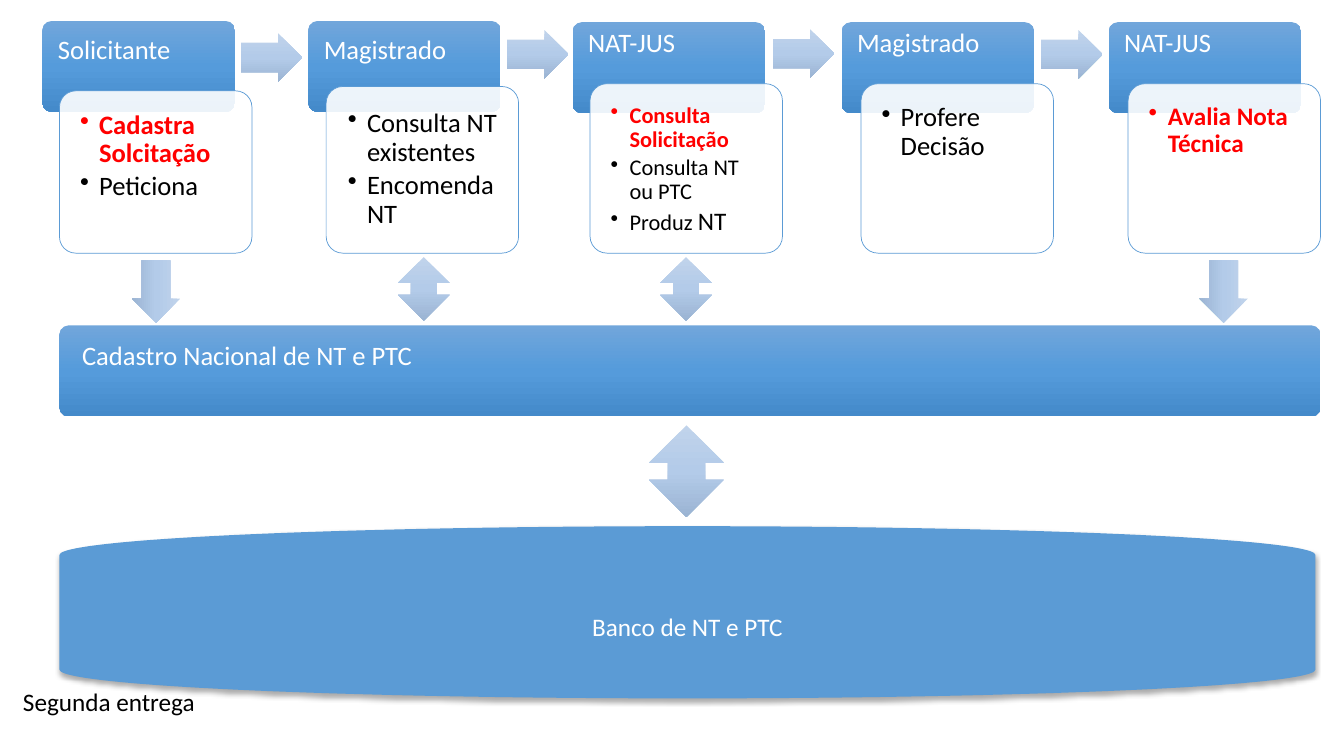
import copy

import pptx
import pptx.dml.color
import pptx.enum.shapes
import pptx.enum.text
import pptx.oxml
import pptx.oxml.ns
import pptx.util

Cm = pptx.util.Cm
Pt = pptx.util.Pt
SHAPE = pptx.enum.shapes.MSO_SHAPE
qn = pptx.oxml.ns.qn

FONT = "Calibri"
WHITE, BLACK, RED, BLUE = "FFFFFF", "000000", "FF0000", "5B9BD5"
BAR_GRADIENT = ("71A6DB", "559BDB", "448ACA")
ARROW_GRADIENT = ("C0D3EB", "B3CBE9", "9BB4D3")

BAR_W, BAR_H = 4.85, 2.29
CARD_BOTTOM = 6.38
INSET = 0.39

# Bar left, bar top, title top, title, card left, card top, text shift, items
# Each item is a list of runs: text, size, colour, bold
STAGES = [
    (1.07, 0.53, 0.53, "Solicitante", 1.5, 2.29, (0.13, 0.12),
     [[("Cadastra Solcitação", 19, RED, True)],
      [("Peticiona", 19, BLACK, False)]]),
    (7.77, 0.53, 0.53, "Magistrado", 8.22, 2.18, (0.16, 0.2),
     [[("Consulta NT existentes", 19, BLACK, False)],
      [("Encomenda NT", 19, BLACK, False)]]),
    (14.43, 0.56, 0.36, "NAT-JUS", 14.87, 2.11, (0.13, 0.12),
     [[("Consulta Solicitação", 16, RED, True)],
      [("Consulta NT ou PTC", 16, BLACK, False)],
      [("Produz ", 16, BLACK, False), ("NT", 18, BLACK, False)]]),
    (21.21, 0.56, 0.36, "Magistrado", 21.7, 2.11, (0.13, 0.12),
     [[("Profere Decisão", 19, BLACK, False)]]),
    (27.94, 0.56, 0.36, "NAT-JUS", 28.43, 2.11, (0.13, 0.12),
     [[("Avalia Nota Técnica", 18, RED, True)]]),
]

NEXT_ARROWS = [(6.07, 0.84), (12.78, 0.76), (19.48, 0.74), (26.24, 0.76)]
DOWN_ARROWS = [3.15, 30.05]
EXCHANGE_ARROWS = [(10.03, 6.48, 1.3, 1.6), (16.64, 6.48, 1.3, 1.6),
                   (16.36, 10.72, 1.88, 2.31)]


def rgb(colour):
    return pptx.dml.color.RGBColor.from_string(colour)


def add_block(slide, kind, left, top, width, height, adjustments=()):
    block = slide.shapes.add_shape(kind, Cm(left), Cm(top), Cm(width), Cm(height))
    block.shadow.inherit = False
    block.line.fill.background()
    for index, value in enumerate(adjustments):
        block.adjustments[index] = value
    return block


def fill_gradient(block, colours):
    """Fill from top to bottom with three evenly spaced colours."""
    block.fill.gradient()
    block.fill.gradient_angle = 270
    stop_list = block.fill._xPr.find(qn("a:gradFill")).find(qn("a:gsLst"))
    stop_list.append(copy.deepcopy(stop_list[-1]))
    for stop, colour, position in zip(block.fill.gradient_stops, colours, (0, 0.5, 1)):
        stop.color.rgb = rgb(colour)
        stop.position = position


def add_run(paragraph, text, size, colour, bold=False):
    run = paragraph.add_run()
    run.text = text
    run.font.name = FONT
    run.font.size = Pt(size)
    run.font.bold = bold
    run.font.color.rgb = rgb(colour)


def add_text_frame(slide, left, top, width, height, insets=None):
    box = slide.shapes.add_textbox(Cm(left), Cm(top), Cm(width), Cm(height))
    frame = box.text_frame
    frame.word_wrap = True
    if insets:
        frame.margin_left, frame.margin_top, frame.margin_right, frame.margin_bottom = (
            Cm(inset) for inset in insets)
    return frame


def add_bar(slide, left, top, width, title, title_left, title_top, title_width):
    bar = add_block(slide, SHAPE.ROUNDED_RECTANGLE, left, top, width, BAR_H, [0.1])
    fill_gradient(bar, BAR_GRADIENT)
    frame = add_text_frame(slide, title_left, title_top, title_width, 1.52,
                           (INSET, INSET, INSET, 0.2))
    heading = frame.paragraphs[0]
    heading.line_spacing = 0.9
    heading.space_after = Pt(7)
    add_run(heading, title, 19, WHITE)


def add_bullet(paragraph):
    properties = paragraph._p.get_or_add_pPr()
    properties.set("marL", str(Cm(0.48)))
    properties.set("indent", str(-Cm(0.48)))
    bullet = pptx.oxml.parse_xml(
        '<a:buChar xmlns:a="http://schemas.openxmlformats.org/drawingml/2006/main" char="•"/>')
    properties.append(bullet)


def add_card(slide, left, top, shift, items):
    height = CARD_BOTTOM - top
    card = add_block(slide, SHAPE.ROUNDED_RECTANGLE, left, top, BAR_W, height, [0.1])
    card.fill.solid()
    card.fill.fore_color.rgb = rgb(WHITE)
    white = card.fill._xPr.find(qn("a:solidFill"))[0]
    white.append(white.makeelement(qn("a:alpha"), {"val": "90000"}))
    card.line.color.rgb = rgb(BLUE)
    card.line.width = Pt(0.5)

    frame = add_text_frame(slide, left + shift[0], top + shift[1], 4.6,
                           height - 2 * shift[1], [INSET] * 4)
    for index, runs in enumerate(items):
        item = frame.add_paragraph() if index else frame.paragraphs[0]
        item.line_spacing = 0.9
        item.space_after = Pt(3)
        add_bullet(item)
        for run in runs:
            add_run(item, *run)


def add_arrow(slide, kind, left, top, width, height, adjustments=(), rotation=0):
    arrow = add_block(slide, kind, left, top, width, height, adjustments)
    arrow.rotation = rotation
    fill_gradient(arrow, ARROW_GRADIENT)


def add_database(slide, label):
    disk = add_block(slide, SHAPE.FLOWCHART_MAGNETIC_DISK, 1.5, 13.26, 31.65, 4.34)
    disk.fill.solid()
    disk.fill.fore_color.rgb = rgb(BLUE)
    effects = disk._element.spPr.find(qn("a:effectLst"))
    effects.append(pptx.oxml.parse_xml(
        '<a:outerShdw xmlns:a="http://schemas.openxmlformats.org/drawingml/2006/main"'
        f' blurRad="{Pt(3.5)}" dist="{Pt(2.2)}" dir="5400000" rotWithShape="0">'
        '<a:srgbClr val="000000"><a:alpha val="32000"/></a:srgbClr></a:outerShdw>'))
    disk.text_frame.vertical_anchor = pptx.enum.text.MSO_ANCHOR.MIDDLE
    paragraph = disk.text_frame.paragraphs[0]
    paragraph.alignment = pptx.enum.text.PP_ALIGN.CENTER
    add_run(paragraph, label, 18, WHITE)


def main():
    deck = pptx.Presentation()
    deck.slide_width, deck.slide_height = Cm(33.87), Cm(19.05)
    slide = deck.slides.add_slide(deck.slide_layouts[6])

    # Database and national register
    add_database(slide, "Banco de NT e PTC")
    add_bar(slide, 1.5, 8.2, 31.78, "Cadastro Nacional de NT e PTC", 1.68, 8.23, 26.52)

    # Stages of the request
    for left, top, title_top, title, card_left, card_top, shift, items in STAGES:
        add_bar(slide, left, top, BAR_W, title, left, title_top, BAR_W)
        add_card(slide, card_left, card_top, shift, items)

    # Arrows between stages, register and database
    for left, top in NEXT_ARROWS:
        add_arrow(slide, SHAPE.RIGHT_ARROW, left, top, 1.55, 1.22, (0.6, 0.5))
    for left in DOWN_ARROWS:
        add_arrow(slide, SHAPE.RIGHT_ARROW, left, 6.74, 1.57, 1.22, (0.6, 0.5), 90)
    for place in EXCHANGE_ARROWS:
        add_arrow(slide, SHAPE.UP_DOWN_ARROW, *place)

    # Delivery caption
    caption = add_text_frame(slide, 0.33, 17.17, 5.31, 1.02)
    add_run(caption.paragraphs[0], "Segunda entrega", 18, BLACK)

    deck.save("out.pptx")


if __name__ == "__main__":
    main()
